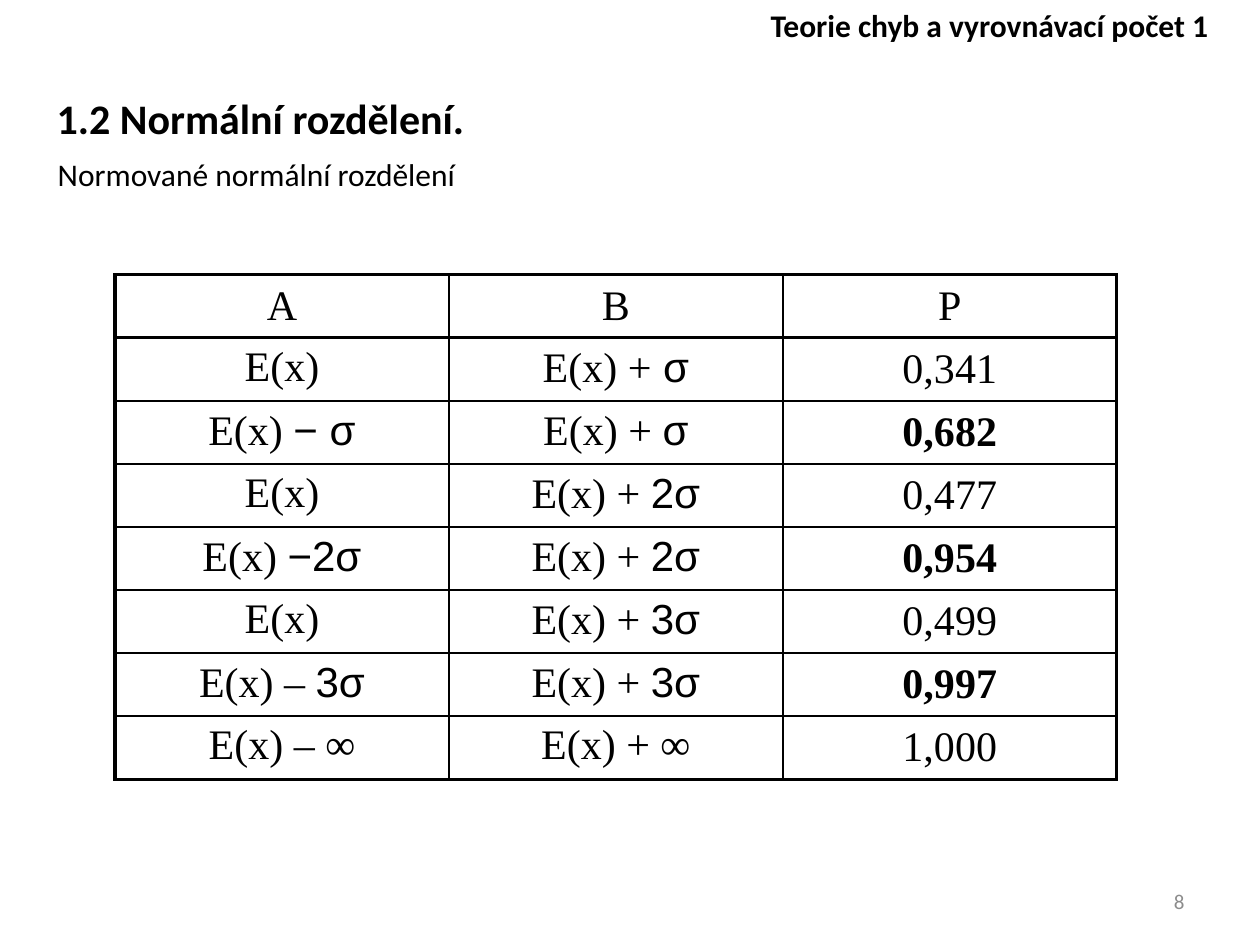
from lxml import etree
from pptx import Presentation
from pptx.dml.color import RGBColor
from pptx.enum.text import MSO_ANCHOR as Anchor, MSO_AUTO_SIZE as AutoSize, PP_ALIGN as Align
from pptx.oxml.ns import qn
from pptx.util import Pt


def color(value):
    return RGBColor.from_string(value)


def write(frame, *runs, size=18, font="Calibri", fill="000000", bold=False, align=Align.LEFT):
    """Write one paragraph; a run is a text or a (text, font) pair."""
    paragraph = frame.paragraphs[0]
    paragraph.alignment = align
    for item in runs:
        text, name = (item, font) if isinstance(item, str) else item
        run = paragraph.add_run()
        run.text = text
        run.font.name = name
        run.font.size = Pt(size)
        run.font.bold = bold
        run.font.color.rgb = color(fill)


presentation = Presentation()
presentation.slide_width, presentation.slide_height = Pt(720), Pt(540)
slide = presentation.slides.add_slide(presentation.slide_layouts[5])

# Title
title = slide.shapes.title
title.left, title.top, title.width, title.height = Pt(25.2), Pt(49), Pt(669), Pt(53.3)
title.text_frame.auto_size = AutoSize.NONE
title.text_frame.vertical_anchor = Anchor.TOP
write(title.text_frame, "1.2 Normální rozdělení.", size=24, bold=True)

# Course name, subtitle and page number
labels = [
    ("Teorie chyb a vyrovnávací počet 1", (411, 0, 309, 29.5), Anchor.TOP,
     dict(bold=True, align=Align.CENTER)),
    ("Normované normální rozdělení", (25.9, 85, 669, 51), Anchor.TOP, {}),
    ("8", (516, 500.5, 168, 28.8), Anchor.MIDDLE,
     dict(size=12, fill="8C8C8C", align=Align.RIGHT)),
]
for text, box, anchor, text_format in labels:
    frame = slide.shapes.add_textbox(*map(Pt, box)).text_frame
    frame.word_wrap = True
    frame.vertical_anchor = anchor
    write(frame, text, **text_format)

# Probability table: serif start and Arial end of A and B, then P
rows = [
    (("A", ""), ("B", ""), "P"),
    (("E(x)", ""), ("E(x) +", " σ"), "0,341"),
    (("E(x) ", "− σ"), ("E(x) + ", "σ"), "0,682"),
    (("E(x)", ""), ("E(x) + ", "2σ"), "0,477"),
    (("E(x) ", "−2σ"), ("E(x) + ", "2σ"), "0,954"),
    (("E(x)", ""), ("E(x) + ", "3σ"), "0,499"),
    (("E(x) – ", "3σ"), ("E(x) + ", "3σ"), "0,997"),
    (("E(x) – ∞", ""), ("E(x) + ∞", ""), "1,000"),
]
bold_values = {"0,682", "0,954", "0,997"}
row_height, column_width = 36, 190.8
last_row, last_column = len(rows) - 1, 2
table = slide.shapes.add_table(
    len(rows), 3, Pt(65.7), Pt(157), Pt(3 * column_width), Pt(len(rows) * row_height)).table
table.first_row = table.horz_banding = False

for r, (lower, upper, probability) in enumerate(rows):
    table.rows[r].height = Pt(row_height)
    for c, (serif, sans) in enumerate((lower, upper, (probability, ""))):
        cell = table.cell(r, c)
        cell.fill.background()
        cell.vertical_anchor = Anchor.MIDDLE if r == 0 or c == last_column else Anchor.TOP
        runs = [serif, (sans, "Arial")] if sans else [serif]
        write(cell.text_frame, *runs, size=24, font="Times New Roman",
              bold=serif in bold_values, align=Align.CENTER)

        # Thick outer frame and header rule, thin inner lines
        thick_sides = {"lnL": c == 0, "lnR": c == last_column,
                       "lnT": r <= 1, "lnB": r in (0, last_row)}
        properties = cell._tc.get_or_add_tcPr()
        for position, (side, thick) in enumerate(thick_sides.items()):
            line = etree.Element(qn(f"a:{side}"), w=str(Pt(2 if thick else 1)))
            solid = etree.SubElement(line, qn("a:solidFill"))
            etree.SubElement(solid, qn("a:srgbClr"), val="000000")
            properties.insert(position, line)

presentation.save("out.pptx")
